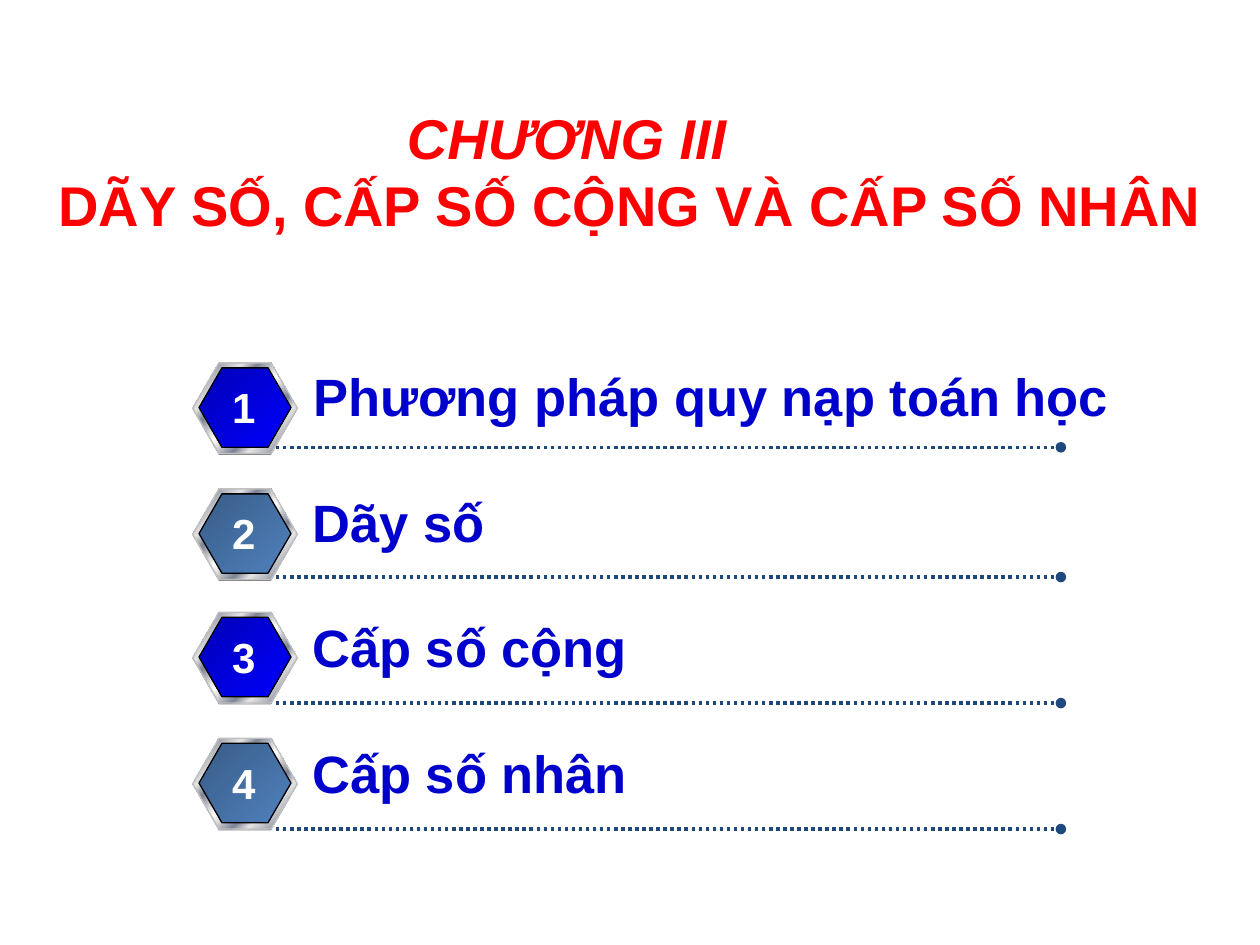
from dataclasses import dataclass
from typing import Any

import pptx
import pptx.dml.color
import pptx.enum.dml
import pptx.enum.shapes
import pptx.enum.text
import pptx.oxml.ns
import pptx.util
from lxml import etree

Inches = pptx.util.Inches
Pt = pptx.util.Pt
RGB = pptx.dml.color.RGBColor
Align = pptx.enum.text.PP_ALIGN
Anchor = pptx.enum.text.MSO_ANCHOR
Size = pptx.enum.text.MSO_AUTO_SIZE
qn = pptx.oxml.ns.qn

RED = RGB(0xFF, 0x00, 0x00)
WHITE = RGB(0xFF, 0xFF, 0xFF)
BLACK = RGB(0x00, 0x00, 0x00)
INK = RGB(0x00, 0x00, 0xCC)
NAVY = RGB(0x1F, 0x49, 0x7D)
GRAY = RGB(0x80, 0x80, 0x80)
SILVER = RGB(0xC0, 0xC0, 0xC0)
LIGHT = RGB(0xE6, 0xE6, 0xE6)
STEEL = RGB(0x7D, 0x84, 0x96)

Stops = list[tuple[int, RGB]]
METAL: Stops = [
    (0, LIGHT), (8, STEEL), (26, LIGHT), (34, STEEL), (46, LIGHT), (50, WHITE),
    (54, LIGHT), (66, STEEL), (74, LIGHT), (92, STEEL), (100, LIGHT),
]
BLUE: Stops = [(0, RGB(0x00, 0x00, 0xB6)), (100, RGB(0x00, 0x00, 0xFF))]
SLATE: Stops = [(0, RGB(0x39, 0x5C, 0x87)), (100, RGB(0x4F, 0x81, 0xBD))]

HEAD = {"name": "Arial", "size": Pt(32), "bold": True}
ITEM = {"name": "Arial", "size": Pt(30), "bold": True}
DIGIT = {"name": "Arial", "size": Pt(24), "bold": True}


@dataclass
class Topic:
    text: str
    top: float
    left: float
    label: float
    width: float
    rule: float


TOPICS = [
    Topic("Phương pháp quy nạp toán học", 2.88, 2.39, 2.84, 6.59, 3.55),
    Topic("Dãy số", 3.88, 2.38, 3.84, 1.58, 4.58),
    Topic("Cấp số cộng", 4.86, 2.38, 4.83, 2.73, 5.58),
    Topic("Cấp số nhân", 5.86, 2.38, 5.83, 2.73, 6.58),
]


def style(font: Any, form: dict[str, Any], color: RGB) -> None:
    for key, value in form.items():
        setattr(font, key, value)
    font.color.rgb = color


def blend(shape: Any, stops: Stops) -> None:
    """Fill the shape with a gradient running down to the right."""
    shape.fill.gradient()
    shape.fill.gradient_angle = 315
    holder = shape.fill._xPr.find(qn("a:gradFill")).find(qn("a:gsLst"))
    for old in list(holder):
        holder.remove(old)
    for place, color in stops:
        stop = etree.SubElement(holder, qn("a:gs"), pos=str(place * 1000))
        etree.SubElement(stop, qn("a:srgbClr"), val=str(color))


def add_hex(shapes: Any, left: float, top: float, width: float, height: float) -> Any:
    shape = shapes.add_shape(
        pptx.enum.shapes.MSO_SHAPE.HEXAGON,
        Inches(left), Inches(top), Inches(width), Inches(height),
    )
    shape.adjustments[0] = 0.289
    shape.shadow.inherit = False
    return shape


def edge(shape: Any, color: RGB) -> None:
    shape.line.color.rgb = color
    shape.line.width = Pt(0.75)


def add_text(shapes: Any, text: str, left: float, top: float, width: float,
             height: float, form: dict[str, Any], color: RGB, align: Any) -> None:
    box = shapes.add_textbox(Inches(left), Inches(top), Inches(width), Inches(height))
    frame = box.text_frame
    frame.word_wrap = False
    frame.auto_size = Size.SHAPE_TO_FIT_TEXT
    para = frame.paragraphs[0]
    para.text = text
    para.alignment = align
    style(para.font, form, color)


def add_rule(shapes: Any, top: float) -> None:
    """Draw a dotted line that ends in a round dot."""
    rule = shapes.add_connector(
        pptx.enum.shapes.MSO_CONNECTOR.STRAIGHT,
        Inches(2.19), Inches(top), Inches(8.42), Inches(top),
    )
    rule.line.color.rgb = NAVY
    rule.line.width = Pt(2)
    rule.line.dash_style = pptx.enum.dml.MSO_LINE.ROUND_DOT
    etree.SubElement(rule.line._get_or_add_ln(), qn("a:tailEnd"), type="oval")
    etree.SubElement(rule._element.spPr, qn("a:effectLst"))


def add_badge(slide: Any, count: int, topic: Topic) -> None:
    shapes = slide.shapes.add_group_shape().shapes
    shade = add_hex(shapes, 1.53, topic.top + 0.01, 0.83, 0.72)
    shade.fill.solid()
    shade.fill.fore_color.rgb = GRAY
    shade.line.fill.background()
    rim = add_hex(shapes, 1.53, topic.top, 0.83, 0.72)
    blend(rim, METAL)
    edge(rim, SILVER)
    core = add_hex(shapes, 1.58, topic.top + 0.04, 0.73, 0.63)
    blend(core, BLUE if count % 2 else SLATE)
    edge(core, BLACK)
    add_rule(shapes, topic.rule)
    add_text(shapes, str(count), 1.74, topic.top + 0.1, 0.39, 0.5,
             DIGIT, WHITE, Align.CENTER)


def add_title(slide: Any) -> None:
    title = slide.shapes.title
    title.left, title.top = Inches(0), Inches(0.63)
    title.width, title.height = Inches(10), Inches(1.45)
    frame = title.text_frame
    frame.text = "CHƯƠNG III\nDÃY SỐ, CẤP SỐ CỘNG VÀ CẤP SỐ NHÂN"
    frame.auto_size = Size.NONE
    frame.vertical_anchor = Anchor.MIDDLE
    layout = [(Align.LEFT, 3.13, True), (Align.CENTER, 0, False)]
    for para, (align, indent, slant) in zip(frame.paragraphs, layout):
        para.alignment = align
        props = para._p.get_or_add_pPr()
        props.set("marL", str(Inches(indent)))
        props.set("indent", "0")
        style(para.font, HEAD, RED)
        para.font.italic = slant


def main() -> None:
    deck = pptx.Presentation()
    deck.slide_width, deck.slide_height = Inches(10), Inches(7.5)
    slide = deck.slides.add_slide(deck.slide_layouts[5])
    add_title(slide)
    for count, topic in enumerate(TOPICS, 1):
        add_badge(slide, count, topic)
        add_text(slide.shapes, topic.text, topic.left, topic.label, topic.width,
                 0.61, ITEM, INK, Align.LEFT)
    deck.save("out.pptx")


if __name__ == "__main__":
    main()
